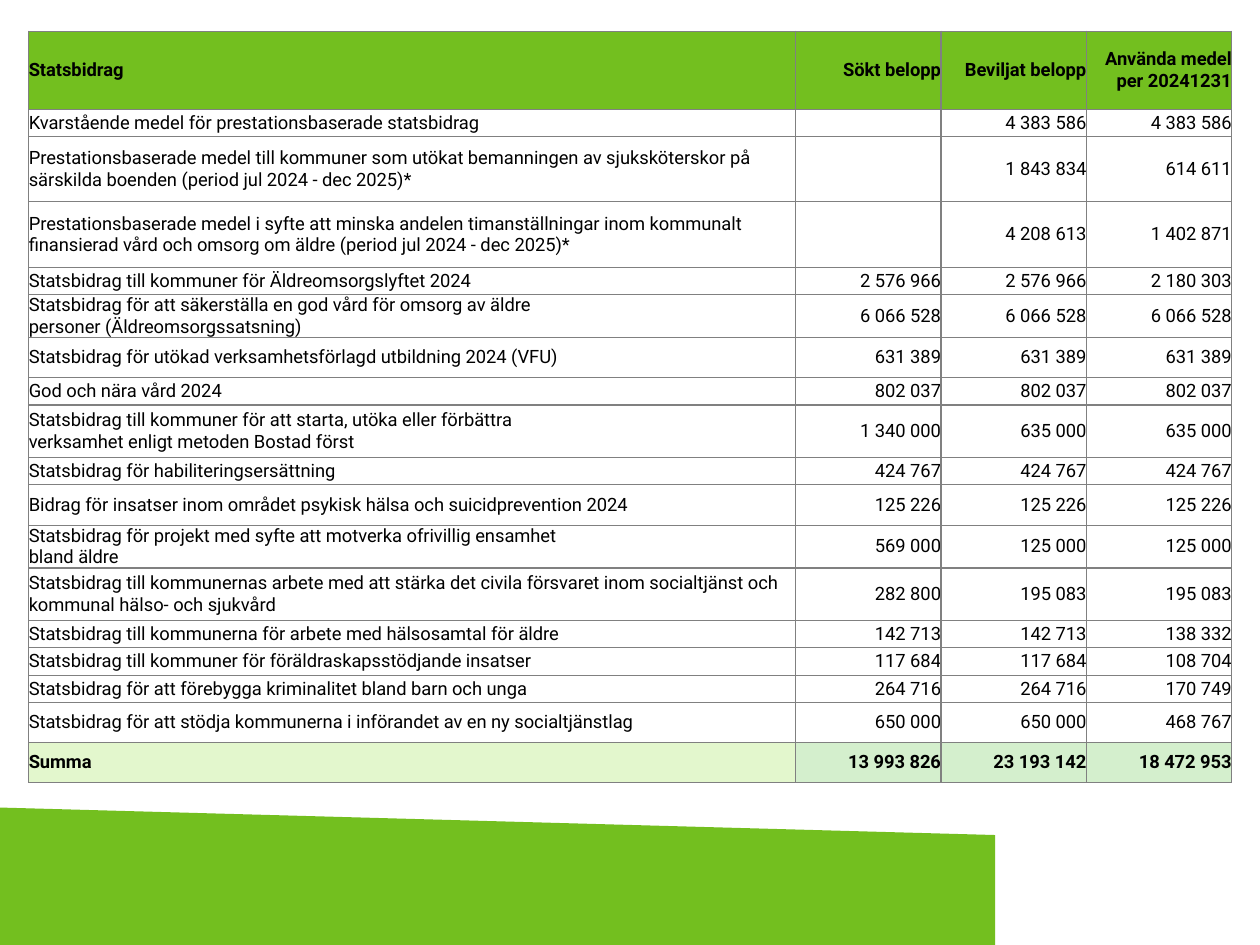
"""Build a slide with a table of state grants and a slanted green footer."""
from dataclasses import dataclass
from typing import Optional

from lxml import etree
from pptx import Presentation
from pptx import util as u
from pptx.dml.color import RGBColor
from pptx.enum import shapes, text
from pptx.oxml.ns import qn


@dataclass(frozen=True)
class Theme:
    font: str = "Roboto"
    size: u.Pt = u.Pt(10.5)
    ink: str = "000000"
    green: str = "73BF1F"
    paper: str = "FFFFFF"
    sum_label: str = "E3F7CD"
    sum_amount: str = "D4EFCD"
    border: str = "808080"
    border_width: u.Pt = u.Pt(0.75)


@dataclass(frozen=True)
class Grant:
    label: str
    applied: Optional[int]
    granted: int
    used: int
    height: float = 0.55

    def texts(self) -> list[str]:
        amounts = (self.applied, self.granted, self.used)
        return [self.label] + ["" if a is None else f"{a:,}".replace(",", " ") for a in amounts]


THEME = Theme()
LABEL_WIDTH, AMOUNT_WIDTH = 15.46, 2.93
HEADER_HEIGHT = 1.57
HEADINGS = ["Statsbidrag", "Sökt belopp", "Beviljat belopp", "Använda medel per 20241231"]
GRANTS = [
    Grant("Kvarstående medel för prestationsbaserade statsbidrag", None, 4383586, 4383586),
    Grant("Prestationsbaserade medel till kommuner som utökat bemanningen av sjuksköterskor på "
          "särskilda boenden (period jul 2024 - dec 2025)*", None, 1843834, 614611, 1.32),
    Grant("Prestationsbaserade medel i syfte att minska andelen timanställningar inom kommunalt "
          "finansierad vård och omsorg om äldre (period jul 2024 - dec 2025)*",
          None, 4208613, 1402871, 1.32),
    Grant("Statsbidrag till kommuner för Äldreomsorgslyftet 2024", 2576966, 2576966, 2180303),
    Grant("Statsbidrag för att säkerställa en god vård för omsorg av äldre\n"
          "personer (Äldreomsorgssatsning)", 6066528, 6066528, 6066528, 0.81),
    Grant("Statsbidrag för utökad verksamhetsförlagd utbildning 2024 (VFU)",
          631389, 631389, 631389, 0.81),
    Grant("God och nära vård 2024", 802037, 802037, 802037),
    Grant("Statsbidrag till kommuner för att starta, utöka eller förbättra\n"
          "verksamhet enligt metoden Bostad först", 1340000, 635000, 635000, 1.06),
    Grant("Statsbidrag för habiliteringsersättning", 424767, 424767, 424767),
    Grant("Bidrag för insatser inom området psykisk hälsa och suicidprevention 2024",
          125226, 125226, 125226, 0.81),
    Grant("Statsbidrag för projekt med syfte att motverka ofrivillig ensamhet\nbland äldre",
          569000, 125000, 125000, 0.81),
    Grant("Statsbidrag till kommunernas arbete med att stärka det civila försvaret inom "
          "socialtjänst och kommunal hälso- och sjukvård", 282800, 195083, 195083, 1.06),
    Grant("Statsbidrag till kommunerna för arbete med hälsosamtal för äldre",
          142713, 142713, 138332),
    Grant("Statsbidrag till kommuner för föräldraskapsstödjande insatser",
          117684, 117684, 108704),
    Grant("Statsbidrag för att förebygga kriminalitet bland barn och unga",
          264716, 264716, 170749),
    Grant("Statsbidrag för att stödja kommunerna i införandet av en ny socialtjänstlag",
          650000, 650000, 468767, 0.81),
]
TOTAL = Grant("Summa", 13993826, 23193142, 18472953, 0.81)


def draw_footer(slide) -> None:
    footer = slide.shapes.add_shape(shapes.MSO_SHAPE.FLOWCHART_MANUAL_INPUT,
                                    0, u.Cm(16.28), u.Cm(20.06), u.Cm(2.77))
    footer._element.spPr.find(qn("a:xfrm")).set("flipH", "1")
    footer.shadow.inherit = False
    footer.fill.solid()
    footer.fill.fore_color.rgb = RGBColor.from_string(THEME.green)
    footer.line.fill.background()


def draw_borders(cell) -> None:
    properties = cell._tc.get_or_add_tcPr()
    for side in ("a:lnL", "a:lnR", "a:lnT", "a:lnB"):
        line = etree.SubElement(properties, qn(side), w=str(THEME.border_width))
        solid = etree.SubElement(line, qn("a:solidFill"))
        etree.SubElement(solid, qn("a:srgbClr"), val=THEME.border)


def fill_cell(cell, wording: str, fill: str, bold: bool, amount: bool) -> None:
    draw_borders(cell)
    cell.fill.solid()
    cell.fill.fore_color.rgb = RGBColor.from_string(fill)
    cell.margin_left = cell.margin_right = cell.margin_top = cell.margin_bottom = 0
    cell.vertical_anchor = text.MSO_ANCHOR.MIDDLE
    paragraph = cell.text_frame.paragraphs[0]
    paragraph.text = wording
    paragraph.alignment = text.PP_ALIGN.RIGHT if amount else text.PP_ALIGN.LEFT
    for run in paragraph.runs:
        run.font.name, run.font.size, run.font.bold = THEME.font, THEME.size, bold
        run.font.color.rgb = RGBColor.from_string(THEME.ink)
    hundredths = str(int(THEME.size.pt * 100))
    for line_break in paragraph._p.findall(qn("a:br")):
        etree.SubElement(line_break, qn("a:rPr"), sz=hundredths)
    if not wording:
        etree.SubElement(paragraph._p, qn("a:endParaRPr"), sz=hundredths)


def fill_row(table, index: int, wordings: list[str], height: float,
             label_fill: str, amount_fill: str, bold: bool = False) -> None:
    table.rows[index].height = u.Cm(height)
    for column, wording in enumerate(wordings):
        amount = column > 0
        fill_cell(table.cell(index, column), wording,
                  amount_fill if amount else label_fill, bold, amount)


def draw_grants(slide) -> None:
    widths = [LABEL_WIDTH] + [AMOUNT_WIDTH] * 3
    height = HEADER_HEIGHT + sum(grant.height for grant in GRANTS + [TOTAL])
    table = slide.shapes.add_table(len(GRANTS) + 2, len(widths), u.Cm(0.58), u.Cm(0.63),
                                   u.Cm(sum(widths)), u.Cm(height)).table
    table.horz_banding = False
    for column, width in zip(table.columns, widths):
        column.width = u.Cm(width)
    fill_row(table, 0, HEADINGS, HEADER_HEIGHT, THEME.green, THEME.green, bold=True)
    for index, grant in enumerate(GRANTS, start=1):
        fill_row(table, index, grant.texts(), grant.height, THEME.paper, THEME.paper)
    fill_row(table, len(GRANTS) + 1, TOTAL.texts(), TOTAL.height,
             THEME.sum_label, THEME.sum_amount, bold=True)


def main() -> None:
    deck = Presentation()
    deck.slide_width, deck.slide_height = u.Cm(25.4), u.Cm(19.05)
    slide = deck.slides.add_slide(deck.slide_layouts[6])
    draw_footer(slide)
    draw_grants(slide)
    deck.save("out.pptx")


if __name__ == "__main__":
    main()
